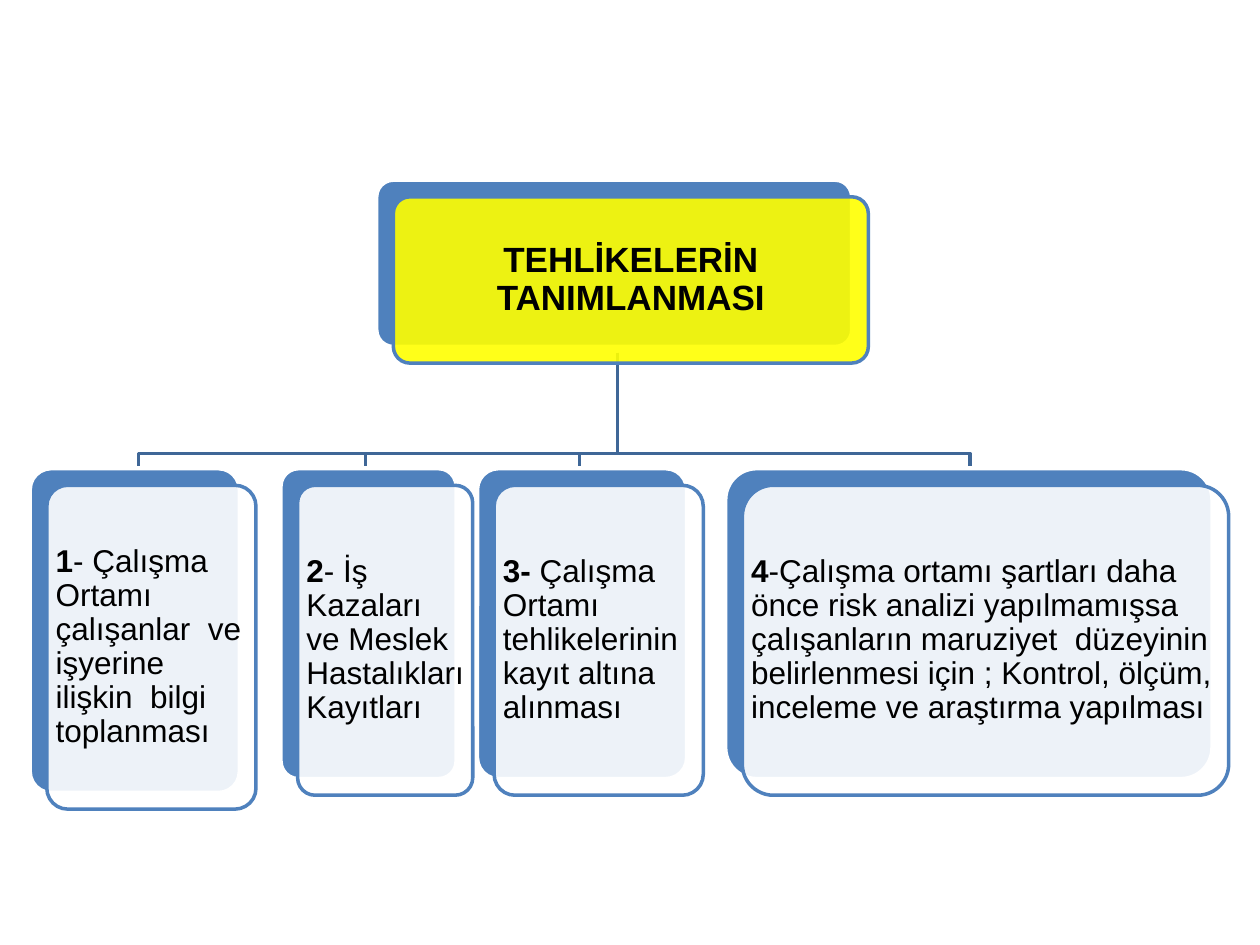
from collections import namedtuple

from lxml.etree import SubElement
from pptx import Presentation
from pptx.dml.color import RGBColor
from pptx.enum.shapes import MSO_SHAPE
from pptx.enum.text import MSO_ANCHOR, PP_ALIGN
from pptx.oxml.ns import qn
from pptx.util import Inches, Pt

COLS, ROWS = 100, 75
WIDTH, HEIGHT = Inches(10), Inches(7.5)
COL, ROW = WIDTH / COLS, HEIGHT / ROWS

HUES = {
    "back": "4F81BD",
    "link": "3F6797",
    "white": "FFFFFF",
    "head": "FFFF00",
    "text": "000000",
}
STEP = 1.32  # offset of each front card from its back card
BEND = 1.1   # height of the last leg of a link
TOP = 37.2   # row where the child cards start

Box = namedtuple("Box", "left top width height")

HEAD = Box(29.9, 14.3, 37.7, 13.2)
TITLE = [("TEHLİKELERİN TANIMLANMASI", True)]
CARDS = [
    (Box(2.4, TOP, 16.6, 25.7),
     [("1", True),
      ("- Çalışma Ortamı çalışanlar  ve işyerine ilişkin  bilgi toplanması", False)]),
    (Box(22.3, TOP, 13.9, 24.6),
     [("2", True), ("- İş Kazaları ve Meslek Hastalıkları Kayıtları", False)]),
    (Box(37.9, TOP, 16.6, 24.6),
     [("3- ", True),
      ("Çalışma Ortamı tehlikelerinin kayıt altına alınması", False)]),
    (Box(57.6, TOP, 38.6, 24.6),
     [("4", True),
      ("-Çalışma ortamı şartları daha önce risk analizi yapılmamışsa "
       "çalışanların maruziyet  düzeyinin belirlenmesi için ; Kontrol, ölçüm, "
       "inceleme ve araştırma yapılması", False)]),
]


def hue(name):
    return RGBColor.from_string(HUES[name])


def place(box):
    """Turn a box in grid cells into slide lengths."""
    return (round(box.left * COL), round(box.top * ROW),
            round(box.width * COL), round(box.height * ROW))


def apply(item, values):
    for name, value in values.items():
        setattr(item, name, value)


def stroke(shape, name):
    shape.shadow.inherit = False
    shape.line.color.rgb = hue(name)
    shape.line.width = Pt(2)


def panel(slide, box, fill, line, alpha=None):
    shape = slide.shapes.add_shape(MSO_SHAPE.ROUNDED_RECTANGLE, *place(box))
    shape.adjustments[0] = 0.1
    shape.fill.solid()
    shape.fill.fore_color.rgb = hue(fill)
    stroke(shape, line)
    if alpha:
        color = shape.fill._xPr.find(qn("a:solidFill"))[0]
        SubElement(color, qn("a:alpha"), val=str(alpha * 1000))


def label(slide, box, runs, size, align, inset):
    frame = slide.shapes.add_textbox(*place(box)).text_frame
    edges = ("margin_left", "margin_top", "margin_right", "margin_bottom")
    apply(frame, dict.fromkeys(edges, Inches(inset)))
    apply(frame, {"word_wrap": True, "vertical_anchor": MSO_ANCHOR.MIDDLE})
    para = frame.paragraphs[0]
    apply(para, {"alignment": align, "line_spacing": 0.9})
    for text, bold in runs:
        run = para.add_run()
        run.text = text
        apply(run.font, {"name": "Arial", "size": Pt(size), "bold": bold})
        run.font.color.rgb = hue("text")


def card(slide, box, runs, fill="white", size=18, align=PP_ALIGN.LEFT, inset=0.07):
    """Draw a back card, a see-through front card and its text."""
    front = box._replace(left=box.left + STEP, top=box.top + STEP)
    panel(slide, box, "back", "white")
    panel(slide, front, fill, "back", alpha=90)
    label(slide, front, runs, size, align, inset)


def link(slide, above, below):
    """Draw an elbow from the foot of one box to the top of another."""
    start = above.left + above.width / 2
    end = below.left + below.width / 2
    bend = below.top - BEND
    pen = slide.shapes.build_freeform(start, above.top + above.height, scale=(COL, ROW))
    pen.add_line_segments([(start, bend), (end, bend), (end, below.top)], close=False)
    shape = pen.convert_to_shape()
    shape.fill.background()
    stroke(shape, "link")


def chart(slide, head, cards):
    """Draw the tree: links first, then the head card and its children."""
    for box, _ in reversed(cards):
        link(slide, head, box)
    card(slide, head, TITLE, "head", 20, PP_ALIGN.CENTER, 0.08)
    for box, runs in cards:
        card(slide, box, runs)


def main():
    deck = Presentation()
    apply(deck, {"slide_width": WIDTH, "slide_height": HEIGHT})
    slide = deck.slides.add_slide(deck.slide_layouts[6])
    chart(slide, HEAD, CARDS)
    deck.save("out.pptx")


if __name__ == "__main__":
    main()
